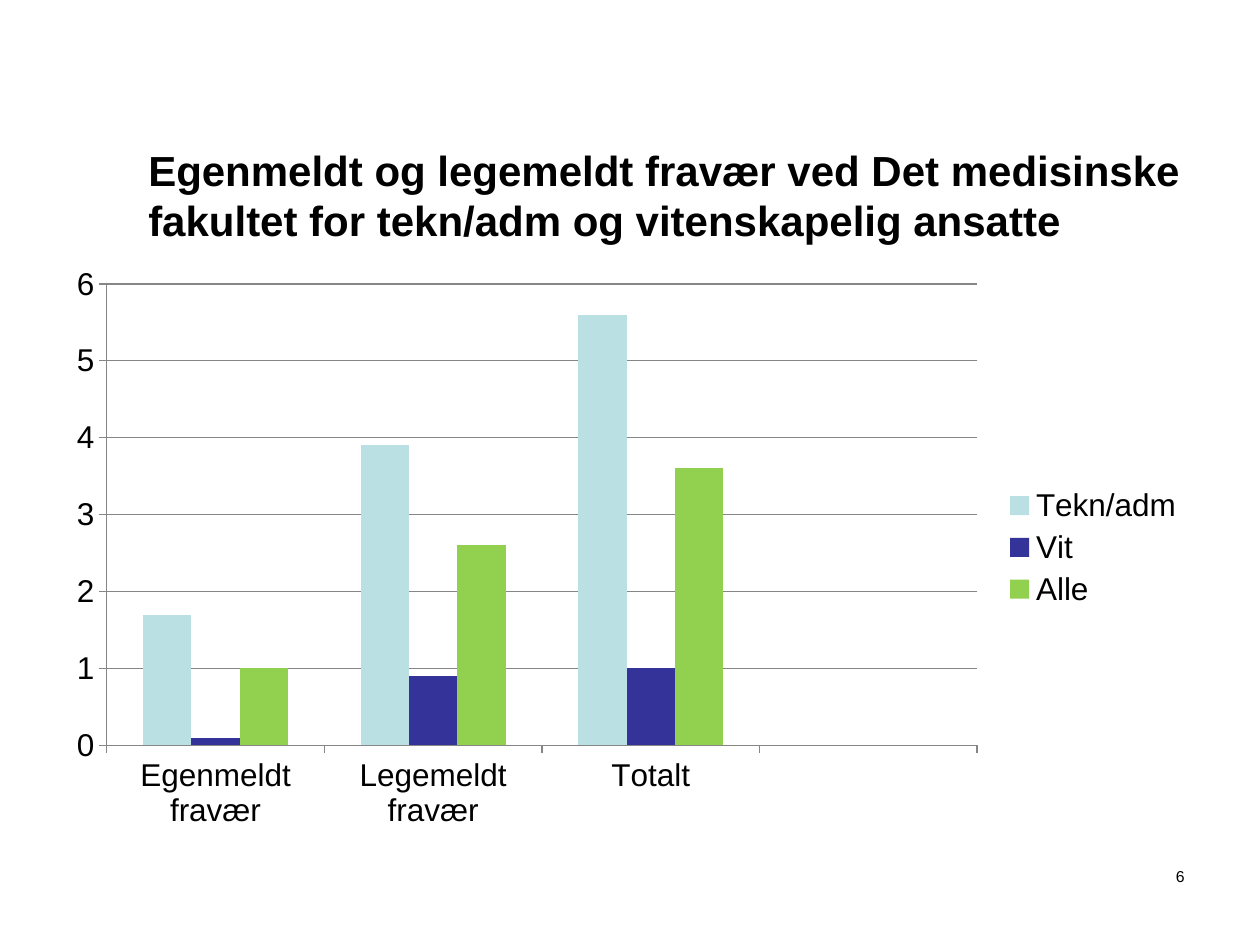
from pptx import Presentation
from pptx import util as u
from pptx.chart.data import CategoryChartData
from pptx.dml.color import RGBColor
from pptx.enum import chart as c
from pptx.enum import text as t

FONT = "Arial"
BLACK = "000000"
AXIS_GREY = "868686"
CATEGORIES = ["Egenmeldt fravær", "Legemeldt fravær", "Totalt", ""]
SERIES = [
    ("Tekn/adm", (1.7, 3.9, 5.6, None), "BBE0E3"),
    ("Vit", (0.1, 0.9, 1, None), "333399"),
    ("Alle", (1, 2.6, 3.6, None), "92D050"),
]


def colour(value):
    return RGBColor.from_string(value)


def style_font(font, size, bold=False):
    font.name = FONT
    font.size = u.Pt(size)
    font.bold = bold
    font.color.rgb = colour(BLACK)


def add_text(page, area, words, size, bold=False,
             align=t.PP_ALIGN.LEFT, anchor=t.MSO_ANCHOR.TOP):
    box = page.shapes.add_textbox(*area)
    frame = box.text_frame
    frame.word_wrap = True
    frame.vertical_anchor = anchor
    para = frame.paragraphs[0]
    para.alignment = align
    span = para.add_run()
    span.text = words
    style_font(span.font, size, bold)


def style_line(line):
    line.color.rgb = colour(AXIS_GREY)
    line.width = u.Pt(0.75)


def add_absence_chart(page, area):
    data = CategoryChartData()
    data.categories = CATEGORIES
    for name, values, _ in SERIES:
        data.add_series(name, values)
    chart = page.shapes.add_chart(
        c.XL_CHART_TYPE.COLUMN_CLUSTERED, *area, data).chart
    chart.has_title = False
    style_font(chart.font, 18)

    # Columns
    plot = chart.plots[0]
    plot.gap_width = 150
    plot.overlap = 0
    plot.vary_by_categories = False
    for series, (_, _, fill) in zip(plot.series, SERIES):
        series.format.fill.solid()
        series.format.fill.fore_color.rgb = colour(fill)
        series.invert_if_negative = False

    # Axes and gridlines
    for axis in (chart.category_axis, chart.value_axis):
        axis.major_tick_mark = c.XL_TICK_MARK.OUTSIDE
        axis.minor_tick_mark = c.XL_TICK_MARK.NONE
        style_line(axis.format.line)
    scale = chart.value_axis
    scale.minimum_scale, scale.maximum_scale, scale.major_unit = 0, 6, 1
    scale.tick_labels.number_format = "0"
    scale.tick_labels.number_format_is_linked = False
    scale.has_major_gridlines = True
    style_line(scale.major_gridlines.format.line)

    # Legend
    chart.has_legend = True
    chart.legend.position = c.XL_LEGEND_POSITION.RIGHT
    chart.legend.include_in_layout = False


def area_cm(*lengths):
    return [u.Cm(length) for length in lengths]


def main():
    deck = Presentation()
    deck.slide_width, deck.slide_height = area_cm(25.4, 19.05)
    page = deck.slides.add_slide(deck.slide_layouts[6])

    # Title
    add_text(page, area_cm(2.74, 2.34, 21.39, 3.17),
             "Egenmeldt og legemeldt fravær ved Det medisinske fakultet "
             "for tekn/adm og vitenskapelig ansatte",
             24, bold=True, anchor=t.MSO_ANCHOR.MIDDLE)
    # Chart
    add_absence_chart(page, area_cm(1.09, 5.13, 23.04, 11.81))
    # Page number
    add_text(page, area_cm(22.23, 17.35, 1.9, 1.27), "6", 9,
             align=t.PP_ALIGN.RIGHT)
    deck.save("out.pptx")


if __name__ == "__main__":
    main()
